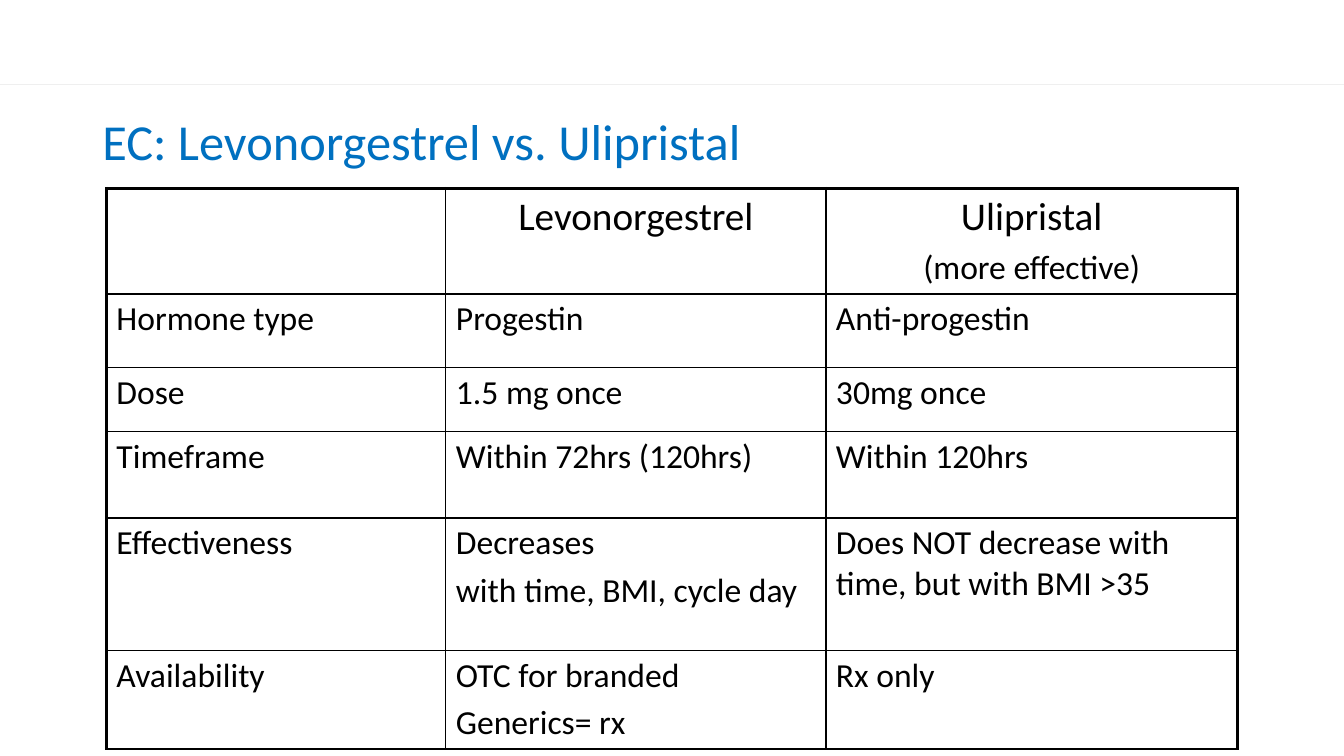
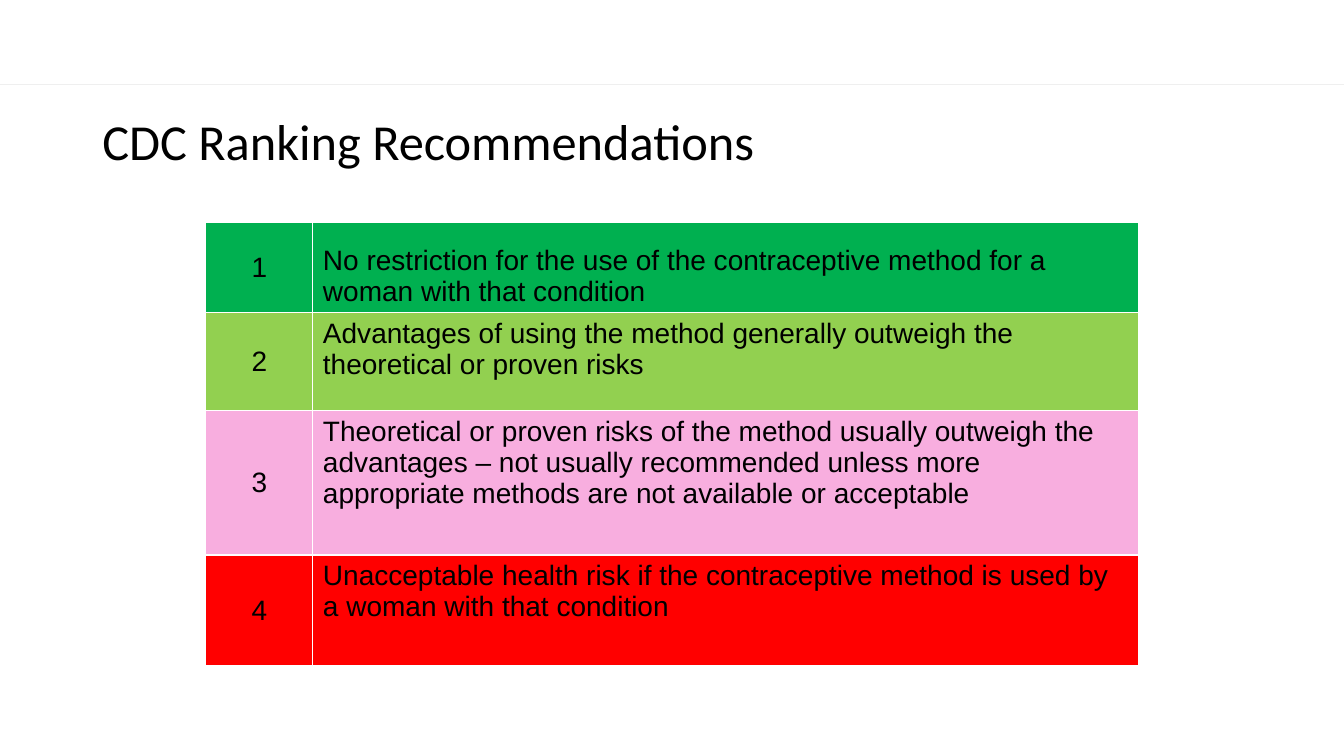
from lxml import etree
from pptx import Presentation
from pptx.dml.color import RGBColor
from pptx.enum.shapes import MSO_CONNECTOR
from pptx.enum.text import MSO_ANCHOR, PP_ALIGN
from pptx.oxml.ns import qn
from pptx.util import Pt

STRAIGHT = MSO_CONNECTOR.STRAIGHT
TOP, MIDDLE, BOTTOM = MSO_ANCHOR.TOP, MSO_ANCHOR.MIDDLE, MSO_ANCHOR.BOTTOM
LEFT, CENTER = PP_ALIGN.LEFT, PP_ALIGN.CENTER

BLACK, WHITE, BLUE, RULE = "000000", "FFFFFF", "0070C0", "EFEFEF"
SLIDE_W, SLIDE_H = 960, 540
THIN, THICK = 1, 2.25

# Content: each line of a cell is a paragraph
DRUG_TITLE = "EC: Levonorgestrel vs. Ulipristal"
DRUG_COLS = [242.5, 271.5, 294]
DRUG_ROWS = [  # height, cells
    (75.5, ["", "Levonorgestrel", "Ulipristal\n(more effective)"]),
    (52.5, ["Hormone type", "Progestin", "Anti-progestin"]),
    (45.5, ["Dose", "1.5 mg once", "30mg once"]),
    (62, ["Timeframe", "Within 72hrs (120hrs)", "Within 120hrs"]),
    (94.5, ["Effectiveness", "Decreases\nwith time, BMI, cycle day",
            "Does NOT decrease with time, but with BMI >35"]),
    (70.5, ["Availability", "OTC for branded\nGenerics= rx", "Rx only"]),
]

RANK_TITLE = "CDC Ranking Recommendations"
RANK_COLS = [76.5, 589.5]
RANK_ROWS = [  # height, fill, anchor, recommendation
    (64.5, "00B050", BOTTOM, "No restriction for the use of the contraceptive "
     "method for a woman with that condition"),
    (70, "92D050", TOP, "Advantages of using the method generally outweigh "
     "the theoretical or proven risks"),
    (103, "F8AEDF", TOP, "Theoretical or proven risks of the method usually "
     "outweigh the advantages – not usually recommended unless more "
     "appropriate methods are not available or acceptable"),
    (79, "FF0000", TOP, "Unacceptable health risk if the contraceptive method "
     "is used by a woman with that condition"),
]


def rgb(color):
    return RGBColor.from_string(color)


def set_font(p, name, size, color):
    p.font.name, p.font.size = name, Pt(size)
    p.font.color.rgb = rgb(color)


def add_slide(prs, title, color):
    """Blank slide with the shared top rule and title."""
    s = prs.slides.add_slide(prs.slide_layouts[6])
    rule = s.shapes.add_connector(STRAIGHT, 0, Pt(60.5), Pt(SLIDE_W), Pt(60.5))
    rule.line.color.rgb, rule.line.width = rgb(RULE), Pt(0.75)
    etree.SubElement(rule._element.spPr, qn("a:effectLst"))
    tf = s.shapes.add_textbox(Pt(66), Pt(62), Pt(828), Pt(82)).text_frame
    tf.word_wrap, tf.vertical_anchor = True, MIDDLE
    p = tf.paragraphs[0]
    p.text, p.line_spacing = title, 0.9
    set_font(p, "Calibri", 36, color)
    return s


def add_table(s, left, top, widths, heights):
    tbl = s.shapes.add_table(len(heights), len(widths), Pt(left), Pt(top),
                             Pt(sum(widths)), Pt(sum(heights))).table
    tbl.first_row = tbl.horz_banding = False
    for col, width in zip(tbl.columns, widths):
        col.width = Pt(width)
    for row, height in zip(tbl.rows, heights):
        row.height = Pt(height)
    return tbl


def set_borders(cell, color, widths):
    """Widths run left, right, top, bottom."""
    tcPr = cell._tc.get_or_add_tcPr()
    for side, width in zip("LRTB", widths):
        ln = etree.SubElement(tcPr, qn("a:ln" + side), w=str(Pt(width)))
        fill = etree.SubElement(ln, qn("a:solidFill"))
        etree.SubElement(fill, qn("a:srgbClr"), val=color)


def fill_cell(cell, text, name, sizes, align=LEFT, anchor=TOP):
    """One size per paragraph; later paragraphs get 20% space before."""
    cell.text, cell.vertical_anchor = text, anchor
    for i, (p, size) in enumerate(zip(cell.text_frame.paragraphs, sizes)):
        p.alignment = align
        if i:
            p.space_before = Pt(0.2 * size)
        set_font(p, name, size, BLACK)


def build_drugs(prs):
    s = add_slide(prs, DRUG_TITLE, BLUE)
    tbl = add_table(s, 76, 134.5, DRUG_COLS, [h for h, _ in DRUG_ROWS])
    last_row, last_col = len(DRUG_ROWS) - 1, len(DRUG_COLS) - 1
    for r, (_, texts) in enumerate(DRUG_ROWS):
        for c, text in enumerate(texts):
            cell = tbl.cell(r, c)
            # Thick frame, thin inner grid
            outer = (c == 0, c == last_col, r == 0, r == last_row)
            set_borders(cell, BLACK, [THICK if o else THIN for o in outer])
            cell.fill.background()
            header = r == 0
            fill_cell(cell, text, "Calibri", (28, 24) if header else (24, 24),
                      CENTER if header else LEFT)


def build_ranking(prs):
    s = add_slide(prs, RANK_TITLE, BLACK)
    tbl = add_table(s, 147, 159, RANK_COLS, [row[0] for row in RANK_ROWS])
    for r, (_, color, anchor, text) in enumerate(RANK_ROWS):
        number, advice = tbl.cell(r, 0), tbl.cell(r, 1)
        for cell in (number, advice):
            set_borders(cell, WHITE, [THIN] * 4)
            cell.fill.solid()
            cell.fill.fore_color.rgb = rgb(color)
        fill_cell(number, str(r + 1), "Arial", [20], CENTER, MIDDLE)
        fill_cell(advice, text, "Arial", [20], LEFT, anchor)


def main():
    prs = Presentation()
    prs.slide_width, prs.slide_height = Pt(SLIDE_W), Pt(SLIDE_H)
    build_drugs(prs)
    build_ranking(prs)
    prs.save("out.pptx")


if __name__ == "__main__":
    main()
